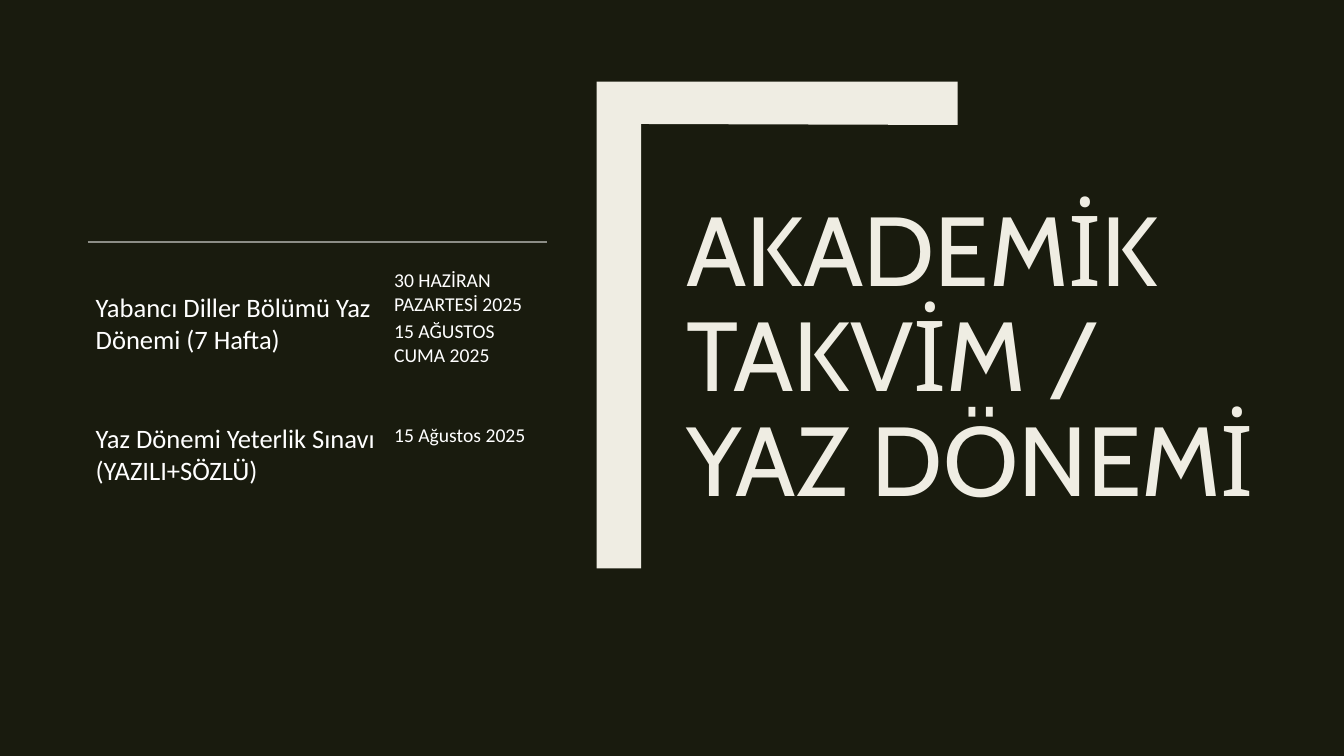
"""Build the summer term academic calendar slide."""
from dataclasses import dataclass

from lxml import etree
from pptx import Presentation
from pptx import util as u
from pptx.dml.color import RGBColor
from pptx.enum import text
from pptx.oxml import ns

COLORS = {"back": "191B0E", "cream": "EFEDE3", "white": "FFFFFF", "rule": "8C8D86"}
TITLE = "AKADEMİK TAKVİM /\vYAZ DÖNEMİ"
BRACKET = [(457.9, 406), (426.2, 406), (426.2, 58.3), (684, 58.3),
           (684, 89.3), (457.9, 88.6)]
TABLE_BOX = (62.6, 172.8, 328.3, 187.2)
COL_WIDTHS = (215.3, 113)
EVENT_CELL = {"vertical_anchor": text.MSO_ANCHOR.BOTTOM,
              "margin_left": u.Pt(5.8), "margin_right": u.Pt(5.8),
              "margin_top": u.Pt(2.9), "margin_bottom": u.Pt(11.5)}
DATE_CELL = {"vertical_anchor": text.MSO_ANCHOR.TOP,
             "margin_left": u.Pt(3.6), "margin_right": 0, "margin_bottom": 0}


@dataclass
class Term:
    """One calendar row: the event, its dates and the gap above the dates."""
    event: str
    dates: list[str]
    date_top: float


TERMS = [
    Term("Yabancı Diller Bölümü Yaz Dönemi (7 Hafta)",
         ["30 HAZİRAN PAZARTESİ 2025", "15 AĞUSTOS CUMA 2025"], 19.4),
    Term("Yaz Dönemi Yeterlik Sınavı (YAZILI+SÖZLÜ)", ["15 Ağustos 2025"], 36.5),
]


def rgb(name: str) -> RGBColor:
    """Return a palette colour."""
    return RGBColor.from_string(COLORS[name])


def apply(obj, values: dict) -> None:
    """Set each attribute in values on obj."""
    for name, value in values.items():
        setattr(obj, name, value)


def write(tf, lines: list[str], font: str, size: float, color: str, para: dict) -> None:
    """Fill a text frame with one formatted paragraph per line."""
    tf.text = "\n".join(lines)
    for p in tf.paragraphs:
        apply(p, para)
        for r in p.runs:
            apply(r.font, {"name": font, "size": u.Pt(size)})
            r.font.color.rgb = rgb(color)


def set_borders(cell, top_rule: bool) -> None:
    """Clear the cell borders, keeping a thin top rule if asked."""
    tc_pr = cell._tc.get_or_add_tcPr()
    for i, side in enumerate("LRTB"):
        ln = etree.Element(ns.qn(f"a:ln{side}"), w=str(u.Pt(1)))
        if side == "T" and top_rule:
            fill = etree.SubElement(ln, ns.qn("a:solidFill"))
            etree.SubElement(fill, ns.qn("a:srgbClr"), val=COLORS["rule"])
        else:
            etree.SubElement(ln, ns.qn("a:noFill"))
        tc_pr.insert(i, ln)


def add_bracket(slide) -> None:
    """Draw the corner bracket beside the title."""
    start, *rest = [(u.Pt(x), u.Pt(y)) for x, y in BRACKET]
    builder = slide.shapes.build_freeform(*start)
    builder.add_line_segments(rest, close=True)
    sp = builder.convert_to_shape()
    sp.shadow.inherit = False
    sp.fill.solid()
    sp.fill.fore_color.rgb = rgb("cream")
    sp.line.fill.background()


def add_title(slide) -> None:
    """Place and format the title placeholder."""
    sp = slide.shapes.title
    apply(sp, {"left": u.Pt(483.1), "top": u.Pt(116.6),
               "width": u.Pt(441.4), "height": u.Pt(256.3)})
    tf = sp.text_frame
    apply(tf, {"word_wrap": True, "auto_size": text.MSO_AUTO_SIZE.NONE,
               "vertical_anchor": text.MSO_ANCHOR.BOTTOM})
    write(tf, [TITLE], "Cabin", 70, "cream",
          {"alignment": text.PP_ALIGN.LEFT, "line_spacing": 0.89})


def add_calendar(slide) -> None:
    """Add the table of events and dates."""
    box = [u.Pt(v) for v in TABLE_BOX]
    table = slide.shapes.add_table(len(TERMS), len(COL_WIDTHS), *box).table
    apply(table, {"first_row": False, "horz_banding": False})
    for col, width in zip(table.columns, COL_WIDTHS):
        col.width = u.Pt(width)
    for i, term in enumerate(TERMS):
        event, dates = table.cell(i, 0), table.cell(i, 1)
        apply(event, EVENT_CELL)
        apply(dates, DATE_CELL | {"margin_top": u.Pt(term.date_top)})
        write(event.text_frame, [term.event], "Calibri", 19, "white", {})
        write(dates.text_frame, term.dates, "Calibri", 14, "white",
              {"space_before": u.Pt(2.3)})
        for cell in (event, dates):
            cell.fill.background()
            set_borders(cell, top_rule=i == 0)


def main() -> None:
    """Build and save the slide."""
    prs = Presentation()
    apply(prs, {"slide_width": u.Pt(960), "slide_height": u.Pt(540)})
    slide = prs.slides.add_slide(prs.slide_layouts[5])
    slide.background.fill.solid()
    slide.background.fill.fore_color.rgb = rgb("back")
    add_bracket(slide)
    add_title(slide)
    add_calendar(slide)
    prs.save("out.pptx")


if __name__ == "__main__":
    main()
